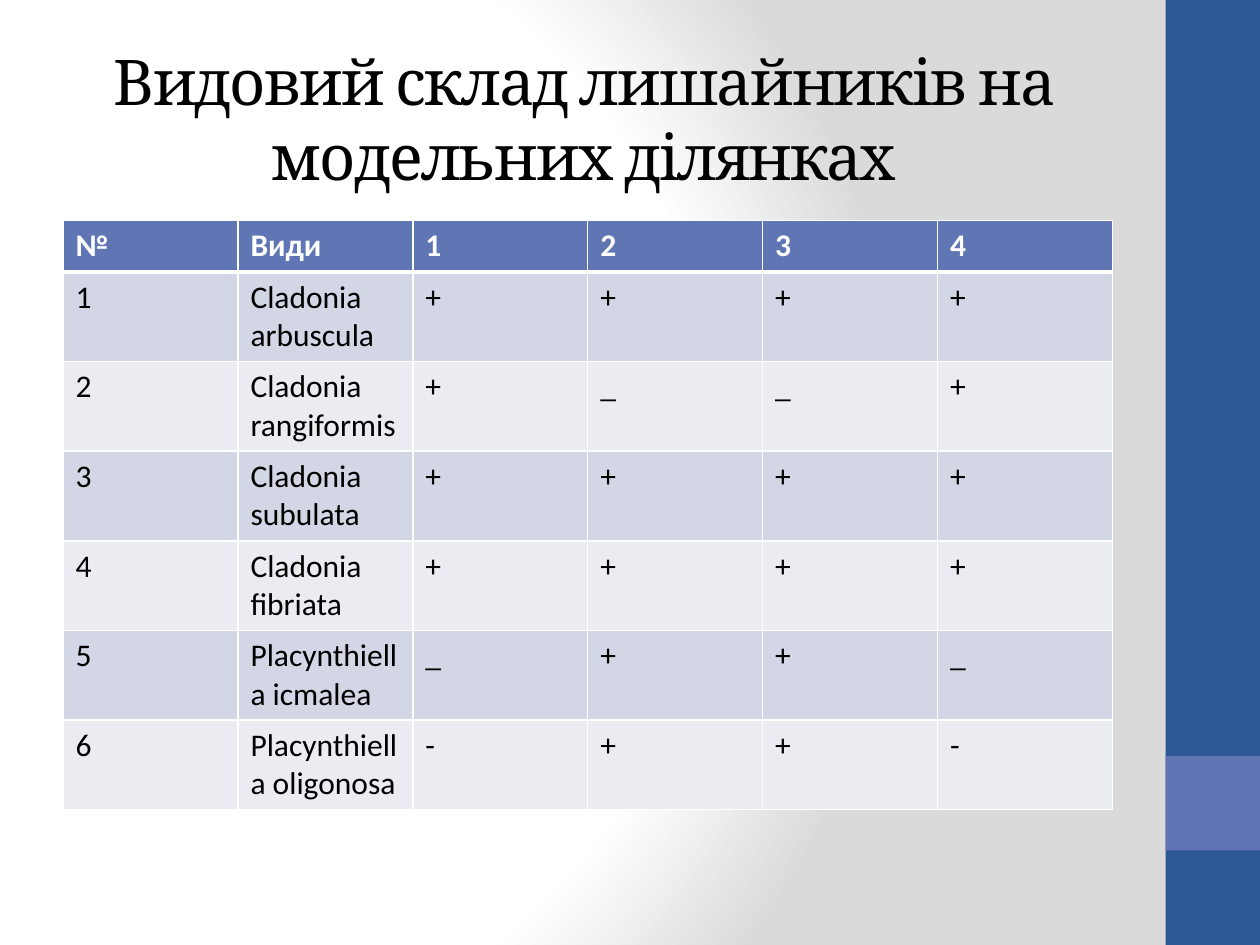
from typing import NamedTuple

import pptx
import pptx.dml.color
import pptx.enum.shapes
import pptx.enum.text
import pptx.oxml
import pptx.oxml.ns
import pptx.util

Inches, Pt = pptx.util.Inches, pptx.util.Pt
COLORS = {
    "bar": "2F5897", "accent": "6076B4", "band": "D2D6E5", "light": "EAECF2",
    "white": "FFFFFF", "gray": "DADADA", "text": "000000",
}
NS = pptx.oxml.ns.nsdecls("a", "p")


class Bar(NamedTuple):
    top: float
    height: float
    color: str


class Species(NamedTuple):
    name: str
    marks: str  # one sign per plot


BARS = [Bar(0, 7.5, "bar"), Bar(6, 0.75, "accent")]
SPECIES = [
    Species("Cladonia arbuscula", "++++"),
    Species("Cladonia rangiformis", "+__+"),
    Species("Cladonia subulata", "++++"),
    Species("Cladonia fibriata", "++++"),
    Species("Placynthiella icmalea", "_++_"),
    Species("Placynthiella oligonosa", "-++-"),
]


def rgb(name: str) -> pptx.dml.color.RGBColor:
    return pptx.dml.color.RGBColor.from_string(COLORS[name])


def set_background(s) -> None:
    stops = "".join(
        f'<a:gs pos="{pos * 1000}"><a:srgbClr val="{COLORS[c]}"/></a:gs>'
        for pos, c in [(0, "white"), (75, "white"), (100, "gray")])
    bg = pptx.oxml.parse_xml(
        f'<p:bg {NS}><p:bgPr><a:gradFill rotWithShape="1"><a:gsLst>{stops}</a:gsLst>'
        '<a:path path="circle"><a:fillToRect l="20000" t="50000" r="100000" b="50000"/>'
        '</a:path></a:gradFill><a:effectLst/></p:bgPr></p:bg>')
    s.element.cSld.insert(0, bg)


def draw_bar(s, bar: Bar) -> None:
    sp = s.shapes.add_shape(
        pptx.enum.shapes.MSO_SHAPE.RECTANGLE,
        Inches(9.25), Inches(bar.top), Inches(0.75), Inches(bar.height))
    sp.shadow.inherit = False
    sp.fill.solid()
    sp.fill.fore_color.rgb = rgb(bar.color)
    sp.line.fill.background()


def format_title(sp, text: str) -> None:
    sp.left, sp.top, sp.width, sp.height = map(Inches, (0.47, 0.31, 8.33, 1.25))
    tf = sp.text_frame
    tf.word_wrap = True
    tf.auto_size = pptx.enum.text.MSO_AUTO_SIZE.NONE
    tf.vertical_anchor = pptx.enum.text.MSO_ANCHOR.MIDDLE
    p = tf.paragraphs[0]
    p.alignment = pptx.enum.text.PP_ALIGN.CENTER
    r = p.add_run()
    r.text = text
    r._r.get_or_add_rPr().set("spc", "-100")
    p.font.name, p.font.size = "Cambria", Pt(36)
    p.font.color.rgb = rgb("text")


def format_cell(cell, text: str, row: int) -> None:
    header = row == 0
    # Borders come before the fill; the rule under the header is thicker
    widths = {"L": 1, "R": 1, "T": 3 if row == 1 else 1, "B": 3 if header else 1}
    tc_pr = cell._tc.get_or_add_tcPr()
    for side, width in widths.items():
        tc_pr.append(pptx.oxml.parse_xml(
            f'<a:ln{side} {NS} w="{Pt(width)}"><a:solidFill>'
            f'<a:srgbClr val="{COLORS["white"]}"/></a:solidFill></a:ln{side}>'))
    cell.fill.solid()
    cell.fill.fore_color.rgb = rgb("accent" if header else "band" if row % 2 else "light")
    cell.text = text
    font = cell.text_frame.paragraphs[0].font
    font.name, font.size, font.bold = "Calibri", Pt(18), header
    font.color.rgb = rgb("white" if header else "text")


def draw_table(s, rows: list[list[str]]) -> None:
    table = s.shapes.add_table(
        len(rows), len(rows[0]), Inches(0.5), Inches(1.75),
        Inches(8.33), Inches(4.61)).table
    for col in table.columns:
        col.width = Inches(8.33 / len(rows[0]))
    for i, values in enumerate(rows):
        table.rows[i].height = Inches(0.7 if i else 0.41)
        for j, value in enumerate(values):
            format_cell(table.cell(i, j), value, i)


def main() -> None:
    prs = pptx.Presentation()
    prs.slide_width, prs.slide_height = Inches(10), Inches(7.5)
    s = prs.slides.add_slide(prs.slide_layouts[5])

    # Background and side bars
    set_background(s)
    for bar in BARS:
        draw_bar(s, bar)

    # Title and species table
    format_title(s.shapes.title, "Видовий склад лишайників на модельних ділянках")
    rows = [["№", "Види", *"1234"]]
    rows += [[str(n), sp.name, *sp.marks] for n, sp in enumerate(SPECIES, 1)]
    draw_table(s, rows)

    prs.save("out.pptx")


if __name__ == "__main__":
    main()
